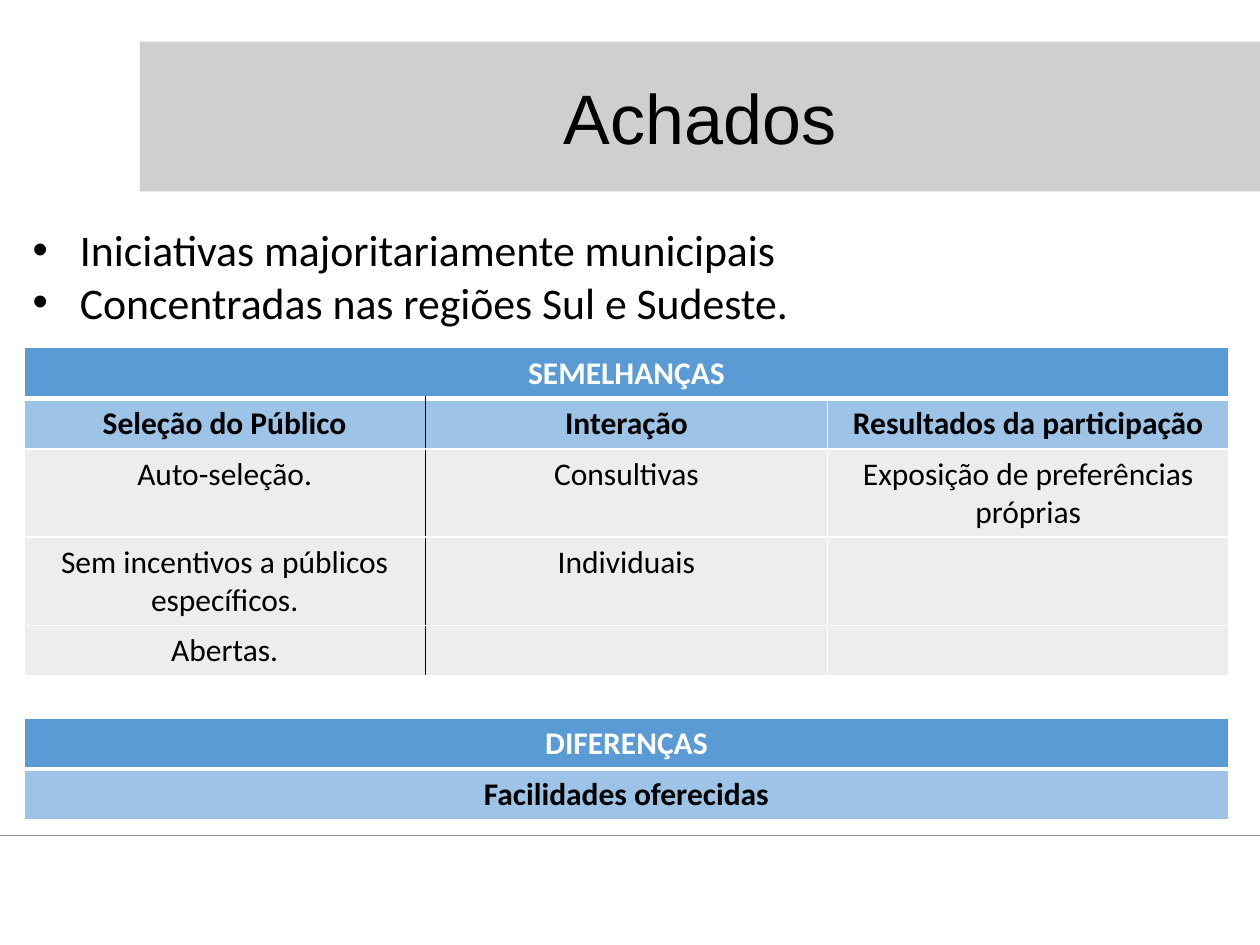
from lxml.etree import SubElement
from pptx import Presentation
from pptx.dml.color import RGBColor
from pptx.enum.shapes import MSO_CONNECTOR as Connector, MSO_SHAPE as Shape
from pptx.enum.text import MSO_ANCHOR as Anchor, PP_ALIGN as Align
from pptx.oxml.ns import qn
from pptx.util import Cm, Pt

COLORS = {
    "black": "000000", "white": "FFFFFF", "band": "D0CECE", "rule": "8C8C8C",
    "header": "5B9BD5", "subheader": "9DC3E6", "body": "EDEDED",
}
LEFT, COL_W = 0.48, 8.1
ROW_H, TALL_ROW_H = 1.02, 1.78


def rgb(name):
    return RGBColor.from_string(COLORS[name])


def write(p, text, size=18, font="Calibri", color="black", bold=False,
          align=Align.CENTER):
    p.alignment = align
    r = p.add_run()
    r.text = text
    r.font.size, r.font.name, r.font.bold = Pt(size), font, bold
    r.font.color.rgb = rgb(color)


def add_rule(s, y, width):
    line = s.shapes.add_connector(Connector.STRAIGHT, 0, Cm(y), width, Cm(y))
    line.line.color.rgb, line.line.width = rgb("rule"), Pt(0.5)
    SubElement(line._element.spPr, qn("a:effectLst"))


def add_title(s, text):
    sp = s.shapes.add_shape(Shape.RECTANGLE, Cm(2.82), Cm(0.84), Cm(22.58), Cm(3.02))
    sp.shadow.inherit = False
    sp.fill.solid()
    sp.fill.fore_color.rgb = rgb("band")
    sp.line.fill.background()
    sp.text_frame.vertical_anchor = Anchor.MIDDLE
    write(sp.text_frame.paragraphs[0], text, size=40, font="Arial")


def add_bullets(s, items):
    tf = s.shapes.add_textbox(Cm(0.41), Cm(4.37), Cm(24.28), Cm(2.39)).text_frame
    tf.word_wrap = True
    for i, item in enumerate(items):
        p = tf.add_paragraph() if i else tf.paragraphs[0]
        pPr = p._p.get_or_add_pPr()
        pPr.set("marL", str(Cm(0.95)))
        pPr.set("indent", str(-Cm(0.95)))
        SubElement(pPr, qn("a:buFont"), typeface="Arial")
        SubElement(pPr, qn("a:buChar"), char="•")
        write(p, item, size=25, align=Align.LEFT)


def set_borders(cell, **changes):
    """White 1 pt borders, except the sides given as (color, width)."""
    tcPr = cell._tc.get_or_add_tcPr()
    for side in "LRTB":
        color, width = changes.get(side, ("white", 1))
        ln = SubElement(tcPr, qn(f"a:ln{side}"), w=str(Pt(width)))
        SubElement(SubElement(ln, qn("a:solidFill")), qn("a:srgbClr"), val=COLORS[color])


def add_grid(s, top, heights, rows, divider=False):
    """Table whose one-item rows span all three columns."""
    table = s.shapes.add_table(len(rows), 3, Cm(LEFT), Cm(top), Cm(3 * COL_W),
                               Cm(sum(heights))).table
    table.first_row = table.horz_banding = False
    for row, height in zip(table.rows, heights):
        row.height = Cm(height)
    for i, texts in enumerate(rows):
        fill = ("header", "subheader", "body")[min(i, 2)]
        if len(texts) == 1:
            table.cell(i, 0).merge(table.cell(i, 2))
        for j in range(3):
            cell = table.cell(i, j)
            borders = {}
            if i == 0:
                borders["B"] = ("white", 3)
            elif i == 1:
                borders["T"] = ("white", 3)
            if divider and i and j < 2:
                borders["RL"[j]] = ("black", 1)
            set_borders(cell, **borders)
            cell.fill.solid()
            cell.fill.fore_color.rgb = rgb(fill)
            if j < len(texts) and texts[j]:
                write(cell.text_frame.paragraphs[0], texts[j], bold=i < 2,
                      color="black" if i else "white")


def main():
    prs = Presentation()
    prs.slide_width, prs.slide_height = Cm(25.4), Cm(19.05)
    s = prs.slides.add_slide(prs.slide_layouts[6])

    # Footer rule, title band and findings
    add_rule(s, 16.84, prs.slide_width)
    add_title(s, "Achados")
    add_bullets(s, ["Iniciativas majoritariamente municipais",
                    "Concentradas nas regiões Sul e Sudeste."])

    # Similarities
    add_grid(s, 7.01, [ROW_H, ROW_H, TALL_ROW_H, TALL_ROW_H, ROW_H], [
        ["SEMELHANÇAS"],
        ["Seleção do Público", "Interação", "Resultados da participação"],
        ["Auto-seleção.", "Consultivas", "Exposição de preferências próprias"],
        ["Sem incentivos a públicos específicos.", "Individuais", ""],
        ["Abertas.", "", ""],
    ], divider=True)

    # Differences
    add_grid(s, 14.48, [ROW_H, ROW_H], [["DIFERENÇAS"], ["Facilidades oferecidas"]])

    prs.save("out.pptx")


if __name__ == "__main__":
    main()
